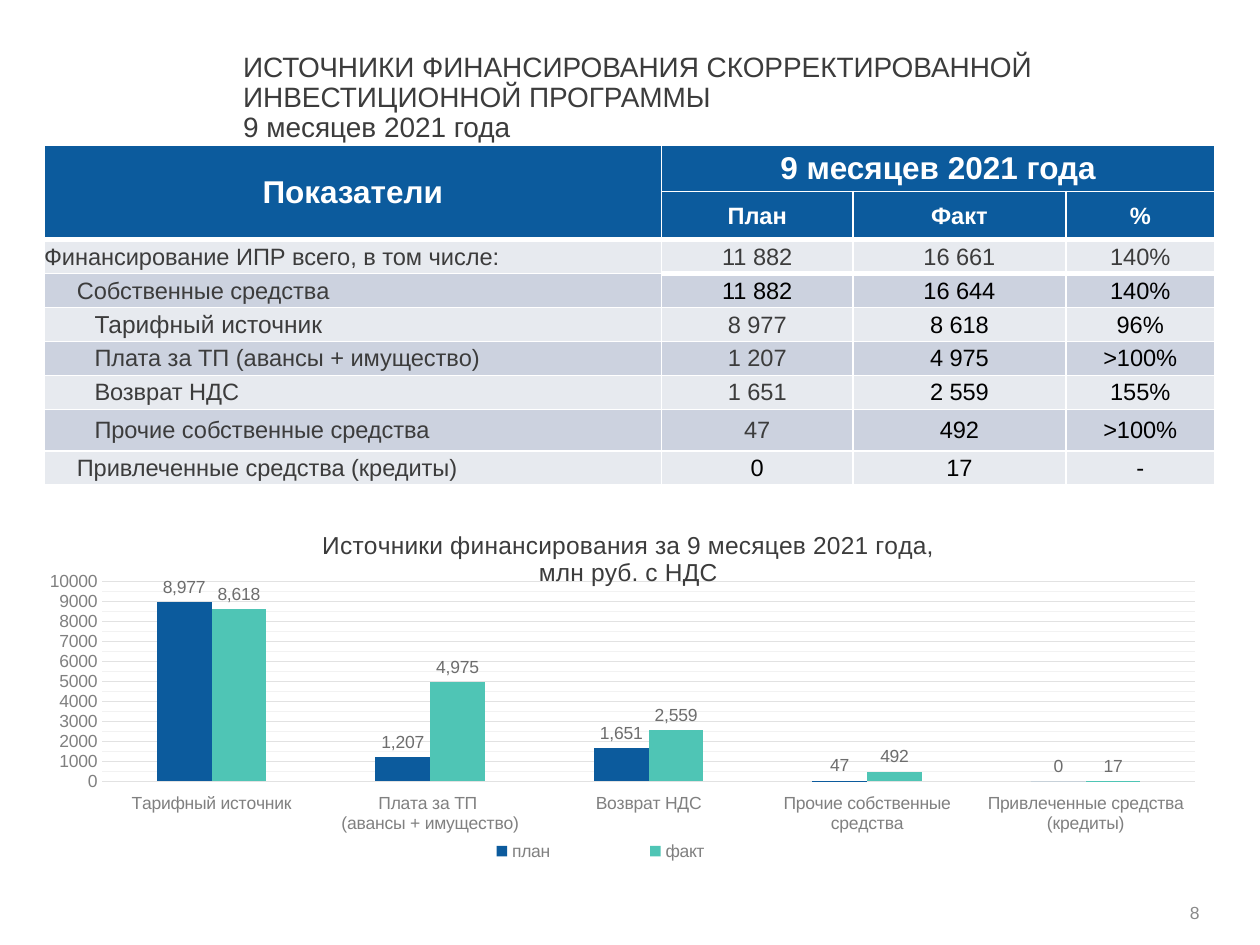
from lxml import etree
from pptx import Presentation
from pptx.chart.data import CategoryChartData
from pptx.dml.color import RGBColor
from pptx.enum.chart import XL_CHART_TYPE, XL_LABEL_POSITION, XL_LEGEND_POSITION, XL_TICK_LABEL_POSITION, XL_TICK_MARK
from pptx.enum.text import MSO_ANCHOR, PP_ALIGN
from pptx.oxml import parse_xml
from pptx.oxml.ns import nsdecls, qn
from pptx.util import Inches, Pt

COLUMNS = XL_CHART_TYPE.COLUMN_CLUSTERED
OUTSIDE = XL_LABEL_POSITION.OUTSIDE_END
BOTTOM = XL_LEGEND_POSITION.BOTTOM
LOW = XL_TICK_LABEL_POSITION.LOW
NO_TICK = XL_TICK_MARK.NONE
MIDDLE, TOP = MSO_ANCHOR.MIDDLE, MSO_ANCHOR.TOP
LEFT, CENTER, RIGHT = PP_ALIGN.LEFT, PP_ALIGN.CENTER, PP_ALIGN.RIGHT

WHITE = RGBColor(0xFF, 0xFF, 0xFF)
BLACK = RGBColor(0, 0, 0)
DARK = RGBColor(0x3C, 0x3C, 0x3C)
BLUE = RGBColor(0x0C, 0x5B, 0x9D)
TEAL = RGBColor(0x4F, 0xC5, 0xB5)
BAND_LIGHT = RGBColor(0xE7, 0xEA, 0xEF)
BAND_DARK = RGBColor(0xCC, 0xD2, 0xDF)
AXIS_GRAY = RGBColor(0x80, 0x80, 0x80)
LABEL_GRAY = RGBColor(0x6D, 0x6D, 0x6D)
NUMBER_GRAY = RGBColor(0x8A, 0x8A, 0x8A)
GRID = RGBColor(0xE2, 0xE2, 0xE2)
MINOR_GRID = RGBColor(0xF2, 0xF2, 0xF2)

COL_WIDTHS = [4.9, 1.52, 1.69, 1.18]
ROW_HEIGHTS = [0.37, 0.38, 0.27, 0.27, 0.27, 0.27, 0.27, 0.33, 0.27]
# label, left indent, label size, values, number of leading values in dark gray
ROWS = [
    ("Финансирование ИПР всего, в том числе:", 0, 13.5, ["11 882", "16 661", "140%"], 3),
    ("Собственные средства", 0.26, 13.5, ["11 882", "16 644", "140%"], 0),
    ("Тарифный источник", 0.4, 14, ["8 977", "8 618", "96%"], 1),
    ("Плата за ТП (авансы + имущество)", 0.4, 13.5, ["1 207", "4 975", ">100%"], 1),
    ("Возврат НДС", 0.4, 13.5, ["1 651", "2 559", "155%"], 1),
    ("Прочие собственные средства", 0.4, 13.5, ["47", "492", ">100%"], 1),
    ("Привлеченные средства (кредиты)", 0.26, 13.5, ["0", "17", "-"], 0),
]
CATEGORIES = ["Тарифный источник", "Плата за ТП \n(авансы + имущество)", "Возврат НДС",
              "Прочие собственные средства", "Привлеченные средства (кредиты)"]
SERIES = [("план", [8977, 1207, 1651, 47, 0], BLUE),
          ("факт", [8618, 4975, 2559, 492, 17], TEAL)]


def set_font(font, size, color, bold=False):
    font.name, font.size, font.bold = "Arial", Pt(size), bold
    font.color.rgb = color


def fill_text(tf, text, size, color, align=LEFT, anchor=MIDDLE):
    tf.text = text
    tf.word_wrap = True
    tf.vertical_anchor = anchor
    tf.margin_left = tf.margin_right = tf.margin_top = tf.margin_bottom = 0
    p = tf.paragraphs[0]
    p.alignment = align
    for r in p.runs:
        set_font(r.font, size, color)
    return p


def set_borders(cell, top=1, bottom=1):
    tc_pr = cell._tc.get_or_add_tcPr()
    for side, width in (("L", 1), ("R", 1), ("T", top), ("B", bottom)):
        tc_pr.append(parse_xml(
            f'<a:ln{side} {nsdecls("a")} w="{Pt(width)}"><a:solidFill>'
            f'<a:srgbClr val="{WHITE}"/></a:solidFill></a:ln{side}>'))


def set_cell(cell, text, size, color, fill, align=CENTER, bold=False, indent=0.01):
    cell.fill.solid()
    cell.fill.fore_color.rgb = fill
    cell.vertical_anchor = MIDDLE
    cell.margin_left, cell.margin_right = Inches(indent), Inches(0.01)
    cell.margin_top, cell.margin_bottom = Inches(0.01), 0
    cell.text = text
    p = cell.text_frame.paragraphs[0]
    p.alignment = align
    for r in p.runs:
        set_font(r.font, size, color, bold)


def add_funding_table(s):
    table = s.shapes.add_table(
        len(ROW_HEIGHTS), len(COL_WIDTHS), Inches(0.35), Inches(1.15),
        Inches(sum(COL_WIDTHS)), Inches(sum(ROW_HEIGHTS))).table
    table.first_row = table.horz_banding = False
    for col, width in zip(table.columns, COL_WIDTHS):
        col.width = Inches(width)
    for row, height in zip(table.rows, ROW_HEIGHTS):
        row.height = Inches(height)

    # Thick rules lie under the header and under the total values
    for i, row in enumerate(table.rows):
        for j, cell in enumerate(row.cells):
            thick_rows = (1, 2) if j else (0, 1)
            set_borders(cell, 3 if i - 1 in thick_rows else 1, 3 if i in thick_rows else 1)

    # Two-level header
    table.cell(0, 0).merge(table.cell(1, 0))
    table.cell(0, 1).merge(table.cell(0, 3))
    for j, text in enumerate(["Показатели", "9 месяцев 2021 года"]):
        set_cell(table.cell(0, j), text, 18, WHITE, BLUE, bold=True)
    for j, text in enumerate(["План", "Факт", "%"], 1):
        set_cell(table.cell(1, j), text, 13.5, WHITE, BLUE, bold=True)

    # Funding sources
    for i, (label, indent, size, values, dark_count) in enumerate(ROWS):
        fill = BAND_DARK if i % 2 else BAND_LIGHT
        set_cell(table.cell(i + 2, 0), label, size, DARK, fill, LEFT, indent=indent)
        for j, value in enumerate(values):
            color = DARK if j < dark_count else BLACK
            set_cell(table.cell(i + 2, j + 1), value, 13.5, color, fill)


def set_layout(parent, before, x, y, w=None, h=None, inner=False):
    """Place a chart part by fractions of the chart's size."""
    for old in parent.findall(qn("c:layout")):
        parent.remove(old)
    layout = etree.Element(qn("c:layout"))
    manual = etree.SubElement(layout, qn("c:manualLayout"))
    items = [("layoutTarget", "inner" if inner else None), ("xMode", "edge"),
             ("yMode", "edge"), ("x", x), ("y", y), ("w", w), ("h", h)]
    for tag, value in items:
        if value is not None:
            etree.SubElement(manual, qn("c:" + tag)).set("val", str(value))
    if before is None:
        parent.insert(0, layout)
    else:
        parent.find(qn(before)).addnext(layout)


def style_axes(chart):
    cat, val = chart.category_axis, chart.value_axis
    for axis in (cat, val):
        axis.major_tick_mark = axis.minor_tick_mark = NO_TICK
        set_font(axis.tick_labels.font, 10, AXIS_GRAY)
    cat.tick_label_position = LOW
    cat.format.line.color.rgb = GRID
    cat.format.line.width = Pt(0.75)
    val.format.line.fill.background()
    val.minimum_scale, val.maximum_scale = 0, 10000
    val.major_unit, val.minor_unit = 1000, 500
    val.has_major_gridlines = val.has_minor_gridlines = True
    val.major_gridlines.format.line.color.rgb = GRID
    val.major_gridlines.format.line.width = Pt(0.75)
    val._element.find(qn("c:minorGridlines")).append(parse_xml(
        f'<c:spPr {nsdecls("c", "a")}><a:ln w="{Pt(0.75)}"><a:solidFill>'
        f'<a:srgbClr val="{MINOR_GRID}"/></a:solidFill></a:ln></c:spPr>'))


def add_funding_chart(s):
    data = CategoryChartData(number_format="General")
    data.categories = CATEGORIES
    for name, values, _ in SERIES:
        data.add_series(name, values)
    chart = s.shapes.add_chart(COLUMNS, Inches(0.24), Inches(3.99),
                               Inches(9.53), Inches(2.99), data).chart
    set_font(chart.font, 10, DARK)

    # Title
    tf = chart.chart_title.text_frame
    tf.text = "Источники финансирования за 9 месяцев 2021 года,\nмлн руб. с НДС"
    for p in tf.paragraphs:
        p.alignment = CENTER
        set_font(p.runs[0].font, 14, DARK)
    set_layout(chart.chart_title._element, "c:tx", 0.24, 0.06)

    # Columns and their labels
    plot = chart.plots[0]
    plot.gap_width, plot.overlap = 199, 0
    plot.vary_by_categories = False
    for series, (_, _, color) in zip(plot.series, SERIES):
        series.format.fill.solid()
        series.format.fill.fore_color.rgb = color
        series.invert_if_negative = False
        labels = series.data_labels
        labels.show_value = True
        labels.position = OUTSIDE
        labels.number_format, labels.number_format_is_linked = "#,##0", False
        set_font(labels.font, 10, LABEL_GRAY)
    style_axes(chart)

    # Legend and plot area
    chart.has_legend = True
    chart.legend.position = BOTTOM
    chart.legend.include_in_layout = False
    set_font(chart.legend.font, 10, AXIS_GRAY)
    set_layout(chart.legend._element, "c:legendPos", 0.31, 0.89, 0.33, 0.07)
    plot_area = chart._chartSpace.find(".//" + qn("c:plotArea"))
    set_layout(plot_area, None, 0.06, 0.21, 0.91, 0.53, inner=True)


def main():
    prs = Presentation()
    prs.slide_width, prs.slide_height = Inches(10), Inches(7.5)
    s = prs.slides.add_slide(prs.slide_layouts[5])

    # Title
    title = s.shapes.title
    title.left, title.top = Inches(1.93), Inches(0.42)
    title.width, title.height = Inches(7.72), Inches(0.47)
    p = fill_text(title.text_frame, "ИСТОЧНИКИ ФИНАНСИРОВАНИЯ СКОРРЕКТИРОВАННОЙ "
                  "ИНВЕСТИЦИОННОЙ ПРОГРАММЫ\v9 месяцев 2021 года", 16, DARK, anchor=TOP)
    p.line_spacing = 0.9

    add_funding_table(s)
    add_funding_chart(s)

    # Page number
    number = s.shapes.add_textbox(Inches(9.09), Inches(7.15), Inches(0.43), Inches(0.18))
    fill_text(number.text_frame, "8", 10, NUMBER_GRAY, RIGHT)
    prs.save("out.pptx")


if __name__ == "__main__":
    main()
